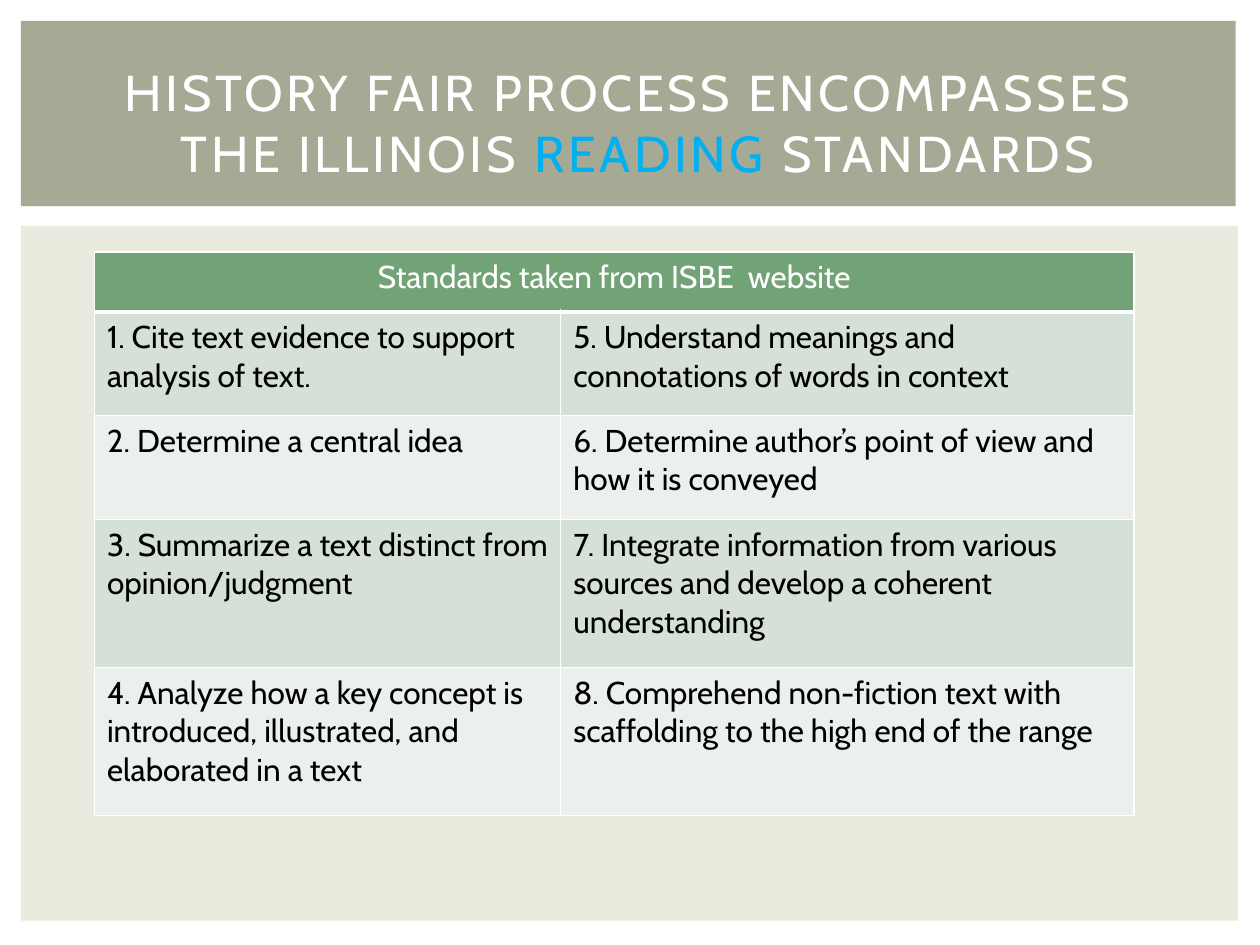
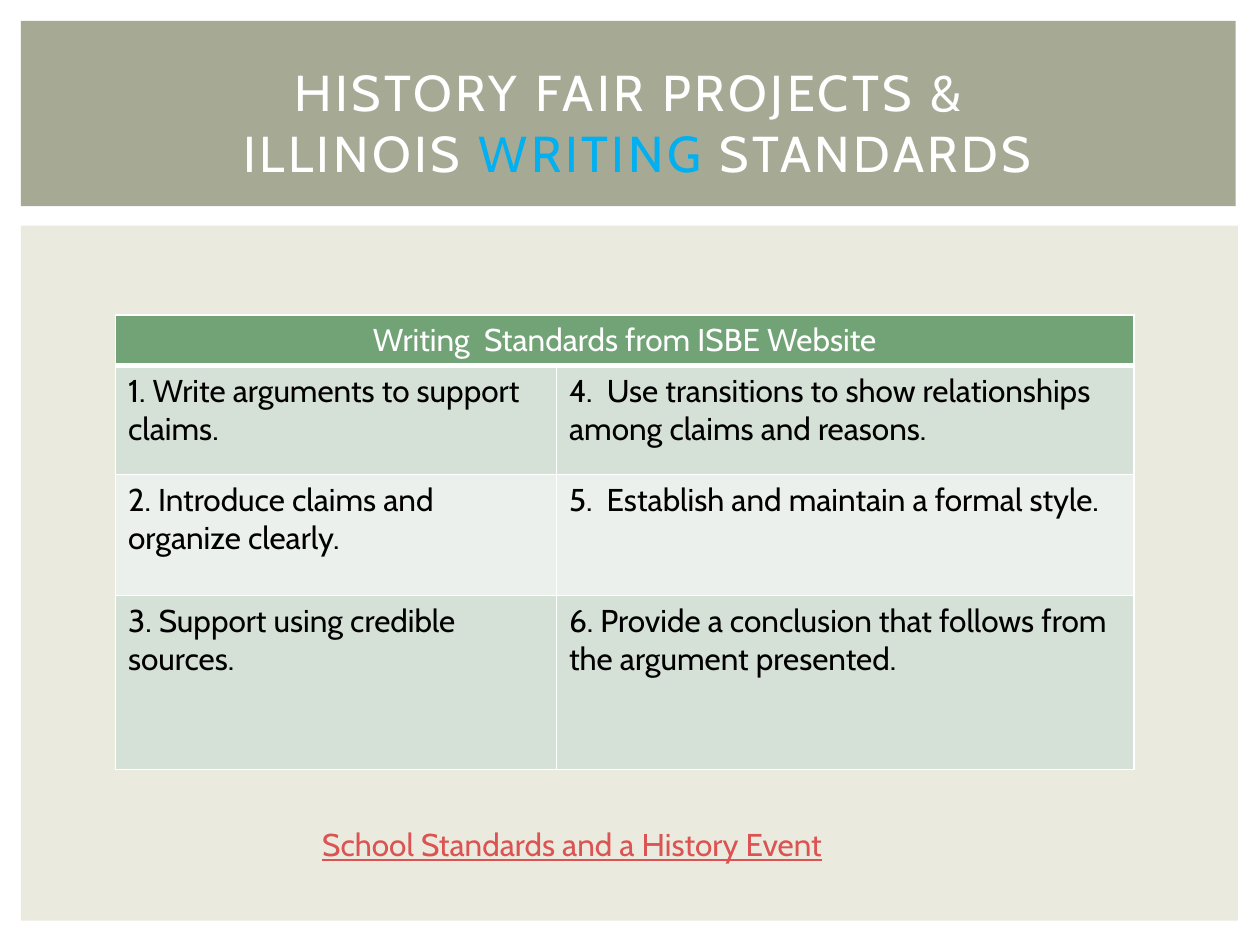
from dataclasses import dataclass
from typing import Optional

from lxml import etree
from pptx import Presentation
from pptx.dml.color import RGBColor
from pptx.enum.shapes import MSO_SHAPE
from pptx.enum.text import MSO_ANCHOR, PP_ALIGN
from pptx.oxml.ns import qn
from pptx.util import Emu, Inches, Pt

RECTANGLE = MSO_SHAPE.RECTANGLE
MIDDLE = MSO_ANCHOR.MIDDLE
CENTER = PP_ALIGN.CENTER
LEFT = PP_ALIGN.LEFT

WHITE = RGBColor(0xFF, 0xFF, 0xFF)
BLACK = RGBColor(0x00, 0x00, 0x00)
OLIVE = RGBColor(0xA6, 0xA9, 0x94)
CREAM = RGBColor(0xEA, 0xEB, 0xDE)
GREEN = RGBColor(0x72, 0xA3, 0x76)
SAGE = RGBColor(0xD5, 0xE0, 0xD6)
MIST = RGBColor(0xEB, 0xF0, 0xEC)
SKY = RGBColor(0x00, 0xB0, 0xF0)
CORAL = RGBColor(0xDB, 0x53, 0x53)

FONT = "Cabin"
TITLE_SIZE = 28.8
BODY_SIZE = 18
LETTER_SPACING = 2
THIN, THICK = 1, 3

SLIDE_WIDTH, SLIDE_HEIGHT = Inches(10), Inches(7.5)
GRID_COLUMNS = 120
UNIT = SLIDE_WIDTH / GRID_COLUMNS


def units(count: float) -> Emu:
    return Emu(round(count * UNIT))


@dataclass(frozen=True)
class Area:
    column: float
    row: float
    columns: float
    rows: float

    def box(self) -> tuple[Emu, Emu, Emu, Emu]:
        return units(self.column), units(self.row), units(self.columns), units(self.rows)


@dataclass(frozen=True)
class Band:
    area: Area
    color: RGBColor


@dataclass(frozen=True)
class Title:
    first_line: str
    lead: str
    subject: str


@dataclass(frozen=True)
class Standards:
    column: float
    row: float
    widths: tuple[float, float]
    heights: tuple[float, ...]
    heading: str
    pairs: tuple[tuple[str, str], ...]


@dataclass(frozen=True)
class Topic:
    title: Title
    standards: Standards
    reference: Optional[str] = None


BANDS = (
    Band(Area(2, 21.5, 115.9, 66.2), CREAM),
    Band(Area(2, 2, 115.7, 17.65), OLIVE),
)
TITLE_AREA = Area(5, 4.7, 110, 13.8)
REFERENCE_AREA = Area(29.5, 78, 58.4, 4.8)

TOPICS = (
    Topic(
        Title("HISTORY FAIR PROCESS ENCOMPASSES", " THE ILLINOIS ", "READING"),
        Standards(
            9, 24, (44.4, 54.6), (5.7, 9.9, 9.9, 14.1, 14.1),
            "Standards taken from ISBE  website",
            (
                ("1. Cite text evidence to support analysis of text.",
                 "5. Understand meanings and connotations of words in context"),
                ("2. Determine a central idea",
                 "6. Determine author’s point of view and how it is conveyed"),
                ("3. Summarize a text distinct from opinion/judgment",
                 "7. Integrate information from various sources and develop a coherent understanding"),
                ("4. Analyze how a key concept is introduced, illustrated, and elaborated in a text",
                 "8. Comprehend non-fiction text with scaffolding to the high end of the range"),
            ),
        ),
    ),
    Topic(
        Title("HISTORY FAIR PROJECTS &", " ILLINOIS ", "WRITING"),
        Standards(
            11, 30, (42, 55), (4.6, 10.4, 11.5, 16.6),
            "Writing  Standards from ISBE Website",
            (
                ("1. Write arguments to support claims.",
                 "4.  Use transitions to show relationships among claims and reasons."),
                ("2. Introduce claims and organize clearly.",
                 "5.  Establish and maintain a formal style."),
                ("3. Support using credible sources.",
                 "6. Provide a conclusion that follows from the argument presented."),
            ),
        ),
        "School Standards and a History Event",
    ),
)


def style_run(run, size: float, color: RGBColor) -> None:
    run.font.name = FONT
    run.font.size = Pt(size)
    run.font.bold = False
    run.font.color.rgb = color


def draw_band(slide, band: Band) -> None:
    rectangle = slide.shapes.add_shape(RECTANGLE, *band.area.box())
    rectangle.shadow.inherit = False
    rectangle.fill.solid()
    rectangle.fill.fore_color.rgb = band.color
    rectangle.line.fill.background()


def draw_title(slide, title: Title) -> None:
    frame = slide.shapes.add_textbox(*TITLE_AREA.box()).text_frame
    frame.word_wrap = True
    frame.vertical_anchor = MIDDLE
    heading = frame.paragraphs[0]
    heading.alignment = CENTER
    heading.text = f"{title.first_line}\v{title.lead}"
    for words in (title.subject, " STANDARDS"):
        heading.add_run().text = words
    for run in heading.runs:
        style_run(run, TITLE_SIZE, SKY if run.text == title.subject else WHITE)
        run.font._element.set("spc", str(LETTER_SPACING * 100))


def set_borders(cell, bottom: float) -> None:
    properties = cell._tc.get_or_add_tcPr()
    widths = {"a:lnL": THIN, "a:lnR": THIN, "a:lnT": THIN, "a:lnB": bottom}
    for position, (side, width) in enumerate(widths.items()):
        border = etree.Element(qn(side), w=str(Pt(width)))
        fill = etree.SubElement(border, qn("a:solidFill"))
        etree.SubElement(fill, qn("a:srgbClr"), val=str(WHITE))
        properties.insert(position, border)


def fill_cell(cell, words: str, row: int) -> None:
    is_heading = row == 0
    cell.fill.solid()
    cell.fill.fore_color.rgb = GREEN if is_heading else (MIST, SAGE)[row % 2]
    set_borders(cell, THICK if is_heading else THIN)
    cell.text_frame.text = words
    paragraph = cell.text_frame.paragraphs[0]
    paragraph.alignment = CENTER if is_heading else LEFT
    for run in paragraph.runs:
        style_run(run, BODY_SIZE, WHITE if is_heading else BLACK)


def draw_standards(slide, standards: Standards) -> None:
    area = Area(standards.column, standards.row, sum(standards.widths), sum(standards.heights))
    rows = ((standards.heading, ""), *standards.pairs)
    grid = slide.shapes.add_table(len(rows), len(standards.widths), *area.box()).table
    for column, width in zip(grid.columns, standards.widths):
        column.width = units(width)
    for row, height in zip(grid.rows, standards.heights):
        row.height = units(height)
    grid.cell(0, 0).merge(grid.cell(0, 1))
    for row, pair in enumerate(rows):
        for column, words in enumerate(pair):
            fill_cell(grid.cell(row, column), words, row)


def draw_reference(slide, words: str) -> None:
    frame = slide.shapes.add_textbox(*REFERENCE_AREA.box()).text_frame
    frame.word_wrap = True
    frame.text = words
    run = frame.paragraphs[0].runs[0]
    style_run(run, BODY_SIZE, CORAL)
    run.font.underline = True


def draw_topic(presentation, topic: Topic) -> None:
    slide = presentation.slides.add_slide(presentation.slide_layouts[6])
    for band in BANDS:
        draw_band(slide, band)
    draw_standards(slide, topic.standards)
    draw_title(slide, topic.title)
    if topic.reference:
        draw_reference(slide, topic.reference)


def main() -> None:
    presentation = Presentation()
    presentation.slide_width = SLIDE_WIDTH
    presentation.slide_height = SLIDE_HEIGHT
    for topic in TOPICS:
        draw_topic(presentation, topic)
    presentation.save("out.pptx")


if __name__ == "__main__":
    main()
